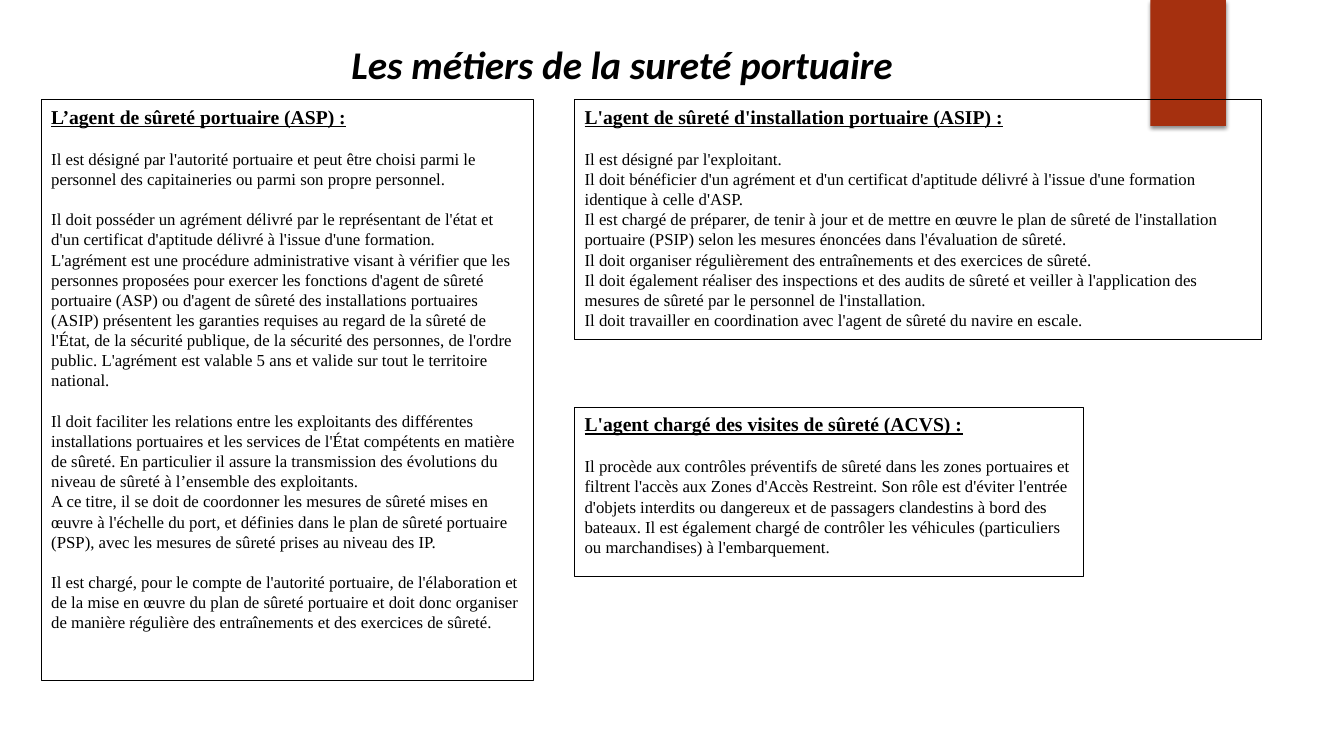
from lxml.etree import SubElement
from pptx import Presentation
from pptx.dml.color import RGBColor
from pptx.enum.shapes import MSO_SHAPE
from pptx.enum.text import MSO_ANCHOR, PP_ALIGN
from pptx.oxml.ns import qn
from pptx.util import Inches, Pt

BLACK = "000000"
LEAD = 1.2  # line pitch relative to the font size

# Each paragraph: (whether a gap precedes it, its lines)
ASP = [
    (True, ["Il est désigné par l'autorité portuaire et peut être choisi parmi le personnel des "
            "capitaineries ou parmi son propre personnel."]),
    (True, ["Il doit posséder un agrément délivré par le représentant de l'état et d'un certificat "
            "d'aptitude délivré à l'issue d'une formation.",
            "L'agrément est une procédure administrative visant à vérifier que les personnes "
            "proposées pour exercer les fonctions d'agent de sûreté portuaire (ASP) ou d'agent de "
            "sûreté des installations portuaires (ASIP) présentent les garanties requises au regard "
            "de la sûreté de l'État, de la sécurité publique, de la sécurité des personnes, de "
            "l'ordre public. L'agrément est valable 5 ans et valide sur tout le territoire "
            "national."]),
    (True, ["Il doit faciliter les relations entre les exploitants des différentes installations "
            "portuaires et les services de l'État compétents en matière de sûreté. En particulier "
            "il assure la transmission des évolutions du niveau de sûreté à l’ensemble des "
            "exploitants."]),
    (False, ["A ce titre, il se doit de coordonner les mesures de sûreté mises en œuvre à l'échelle "
             "du port, et définies dans le plan de sûreté portuaire (PSP), avec les mesures de "
             "sûreté prises au niveau des IP."]),
    (True, ["Il est chargé, pour le compte de l'autorité portuaire, de l'élaboration et de la mise "
            "en œuvre du plan de sûreté portuaire et doit donc organiser de manière régulière des "
            "entraînements et des exercices de sûreté."]),
]
ASIP = [
    (True, ["Il est désigné par l'exploitant.",
            "Il doit bénéficier d'un agrément et d'un certificat d'aptitude délivré à l'issue "
            "d'une formation identique à celle d'ASP."]),
    (False, ["Il est chargé de préparer, de tenir à jour et de mettre en œuvre le plan de sûreté de "
             "l'installation portuaire (PSIP) selon les mesures énoncées dans l'évaluation de "
             "sûreté.",
             "Il doit organiser régulièrement des entraînements et des exercices de sûreté.",
             "Il doit également réaliser des inspections et des audits de sûreté et veiller à "
             "l'application des mesures de sûreté par le personnel de l'installation.",
             "Il doit travailler en coordination avec l'agent de sûreté du navire en escale."]),
]
ACVS = [
    (True, ["Il procède aux contrôles préventifs de sûreté dans les zones portuaires et filtrent "
            "l'accès aux Zones d'Accès Restreint. Son rôle est d'éviter l'entrée d'objets interdits "
            "ou dangereux et de passagers clandestins à bord des bateaux. Il est également chargé "
            "de contrôler les véhicules (particuliers ou marchandises) à l'embarquement."]),
]
JOBS = [
    ((0.41, 0.99, 4.88, 5.76), "L’agent de sûreté portuaire (ASP) :", ASP),
    ((5.7, 0.99, 6.81, 2.38), "L'agent de sûreté d'installation portuaire (ASIP) :", ASIP),
    ((5.7, 4.04, 5.05, 1.68), "L'agent chargé des visites de sûreté (ACVS) :", ACVS),
]


def color(code):
    return RGBColor.from_string(code)


def style(para, name, size, **marks):
    """Set the font of every run, with marks such as bold or italic."""
    for run in para.runs:
        font = run.font
        font.name, font.size = name, Pt(size)
        font.color.rgb = color(BLACK)
        for mark, value in marks.items():
            setattr(font, mark, value)


def add_rect(slide, box):
    rect = slide.shapes.add_shape(MSO_SHAPE.RECTANGLE, *map(Inches, box))
    rect.shadow.inherit = False
    return rect


def add_bar(slide, box):
    """Red ribbon with a soft shadow below it."""
    bar = add_rect(slide, box)
    bar.fill.solid()
    bar.fill.fore_color.rgb = color("A5300F")
    bar.line.fill.background()
    effects = bar.fill._xPr.find(qn("a:effectLst"))
    shade = SubElement(effects, qn("a:outerShdw"), blurRad=str(Pt(3)), dist=str(Pt(2)),
                       dir="5400000", rotWithShape="0")
    tint = SubElement(shade, qn("a:srgbClr"), val=BLACK)
    SubElement(tint, qn("a:alpha"), val="45000")


def add_title(slide, box, text):
    frame = slide.shapes.add_textbox(*map(Inches, box)).text_frame
    frame.word_wrap = True
    frame.text = text
    para = frame.paragraphs[0]
    para.alignment = PP_ALIGN.CENTER
    style(para, "Calibri", 28, bold=True, italic=True)


def add_job(slide, box, head, parts):
    """Outlined panel with an underlined heading and its paragraphs."""
    panel = add_rect(slide, box)
    panel.fill.background()
    panel.line.color.rgb = color(BLACK)
    panel.line.width = Pt(0.75)
    frame = panel.text_frame
    frame.word_wrap = True
    frame.vertical_anchor = MSO_ANCHOR.TOP
    frame.text = head
    top = frame.paragraphs[0]
    top.alignment = PP_ALIGN.LEFT
    top.line_spacing = Pt(14 * LEAD)
    style(top, "Times New Roman", 14, bold=True, underline=True)
    for gap, lines in parts:
        para = frame.add_paragraph()
        para.text = "\v".join(lines)
        para.alignment = PP_ALIGN.LEFT
        para.line_spacing = Pt(12 * LEAD)
        para.space_before = Pt(12 * LEAD if gap else 0)
        style(para, "Times New Roman", 12)


def main():
    deck = Presentation()
    deck.slide_width, deck.slide_height = Inches(13.33), Inches(7.5)
    slide = deck.slides.add_slide(deck.slide_layouts[6])
    add_bar(slide, (11.41, 0, 0.75, 1.25))
    add_title(slide, (0.25, 0.35, 11.84, 0.57), "Les métiers de la sureté portuaire")
    for box, head, parts in JOBS:
        add_job(slide, box, head, parts)
    deck.save("out.pptx")


if __name__ == "__main__":
    main()
